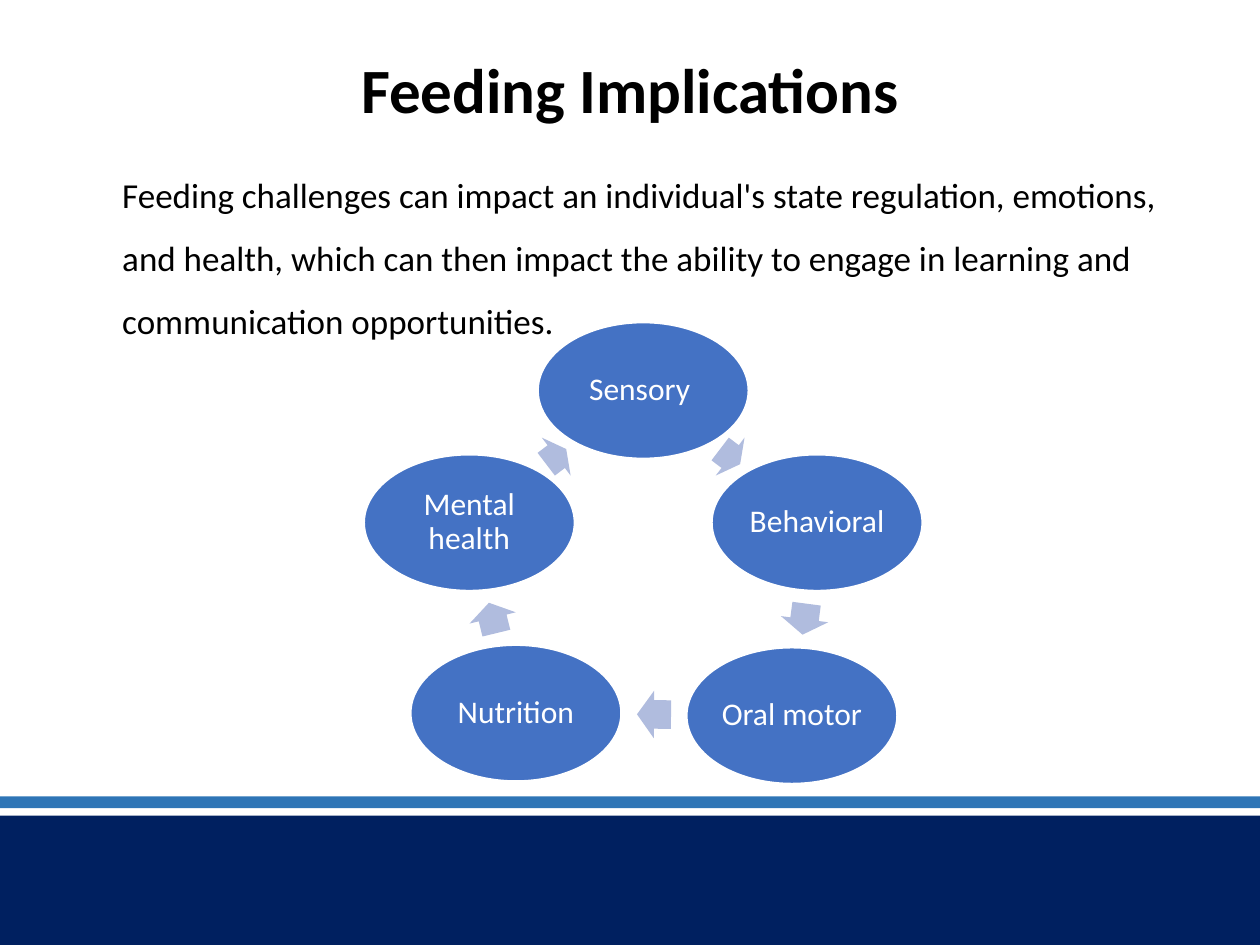
import math
from dataclasses import dataclass

import pptx
import pptx.dml.color
import pptx.enum.shapes
import pptx.enum.text
import pptx.util

SHAPE = pptx.enum.shapes.MSO_SHAPE
ALIGN = pptx.enum.text.PP_ALIGN
ANCHOR = pptx.enum.text.MSO_ANCHOR
SLIDE_W, SLIDE_H = 10, 7.5


@dataclass(frozen=True)
class Theme:
    font: str = "Calibri"
    ink: str = "000000"
    paper: str = "FFFFFF"
    navy: str = "002060"
    stripe: str = "2E75B6"
    stage: str = "4472C4"
    arrow: str = "B0BCDE"
    title_size: int = 36
    body_size: int = 20
    stage_size: int = 18


THEME = Theme()

# Label, centre across and down the cycle (percent), length of the arrow to the next stage (percent of width)
STAGES = [
    ("Sensory ", 50, 14.75, 4.5),
    ("Behavioral ", 81.15, 43.4, 5.6),
    ("Oral motor ", 76.65, 85.25, 6.1),
    ("Nutrition", 27.2, 84.7, 5.6),
    ("Mental health", 18.85, 43.4, 4.5),
]


def rgb(value):
    return pptx.dml.color.RGBColor.from_string(value)


def inches(*lengths):
    return [pptx.util.Inches(length) for length in lengths]


def add_filled(slide, preset, box, color):
    shape = slide.shapes.add_shape(preset, *inches(*box))
    shape.shadow.inherit = False
    shape.fill.solid()
    shape.fill.fore_color.rgb = rgb(color)
    shape.line.fill.background()
    return shape


def write(frame, text, size, color, align, spacing, margins, anchor, bold=False):
    frame.word_wrap = True
    frame.vertical_anchor = anchor
    across, down = inches(*margins)
    frame.margin_left = frame.margin_right = across
    frame.margin_top = frame.margin_bottom = down
    frame.text = text
    paragraph = frame.paragraphs[0]
    paragraph.alignment = align
    paragraph.line_spacing = spacing
    font = paragraph.runs[0].font
    font.name, font.size, font.bold = THEME.font, pptx.util.Pt(size), bold
    font.color.rgb = rgb(color)


def add_footer_bands(slide, box):
    left, top, width, height = box
    add_filled(slide, SHAPE.RECTANGLE, (left, top + 0.13 * height, width, 0.87 * height), THEME.navy)
    add_filled(slide, SHAPE.RECTANGLE, (left, top, width, 0.08 * height), THEME.stripe)


def set_title(slide, box):
    title = slide.shapes.title
    title.left, title.top, title.width, title.height = inches(*box)
    write(title.text_frame, "Feeding Implications", THEME.title_size, THEME.ink,
          ALIGN.CENTER, 0.9, (0.1, 0.05), ANCHOR.TOP, bold=True)


def add_summary(slide, box):
    summary = slide.shapes.add_textbox(*inches(*box))
    write(summary.text_frame,
          "Feeding challenges can impact an individual's state regulation, emotions, "
          "and health, which can then impact the ability to engage in learning and "
          "communication opportunities. ",
          THEME.body_size, THEME.ink, ALIGN.LEFT, 1.5, (0.07, 0.04), ANCHOR.TOP)


def add_stage(slide, label, box):
    stage = add_filled(slide, SHAPE.OVAL, box, THEME.stage)
    stage.line.color.rgb = rgb(THEME.paper)
    stage.line.width = pptx.util.Pt(1)
    write(stage.text_frame, label, THEME.stage_size, THEME.paper,
          ALIGN.CENTER, 0.9, (0.03, 0.03), ANCHOR.MIDDLE)


def add_cycle_arrow(slide, start, end, length, thickness):
    """Centre an arrow between two stage centres, pointing at the second."""
    x, y = [(a + b) / 2 for a, b in zip(start, end)]
    arrow = add_filled(slide, SHAPE.RIGHT_ARROW,
                       (x - length / 2, y - thickness / 2, length, thickness), THEME.arrow)
    arrow.adjustments[0], arrow.adjustments[1] = 0.6, 0.5
    arrow.rotation = math.degrees(math.atan2(end[1] - start[1], end[0] - start[0])) % 360


def add_cycle(slide, box):
    left, top, width, height = box
    stage_w, stage_h = 0.377 * width, 0.295 * height
    centers = [(left + width * x / 100, top + height * y / 100) for _, x, y, _ in STAGES]
    following = centers[1:] + centers[:1]
    for (label, _, _, length), center, target in zip(STAGES, centers, following):
        add_stage(slide, label,
                  (center[0] - stage_w / 2, center[1] - stage_h / 2, stage_w, stage_h))
        add_cycle_arrow(slide, center, target, width * length / 100, 0.35 * stage_h)


def main():
    deck = pptx.Presentation()
    deck.slide_width, deck.slide_height = inches(SLIDE_W, SLIDE_H)
    slide = deck.slides.add_slide(deck.slide_layouts[5])
    add_footer_bands(slide, (0, 6.32, SLIDE_W, SLIDE_H - 6.32))
    set_title(slide, (0.69, 0.42, 8.62, 1.05))
    add_cycle(slide, (2.89, 2.56, 4.43, 3.66))
    add_summary(slide, (0.9, 1.17, 8.41, 1.54))
    deck.save("out.pptx")


if __name__ == "__main__":
    main()
